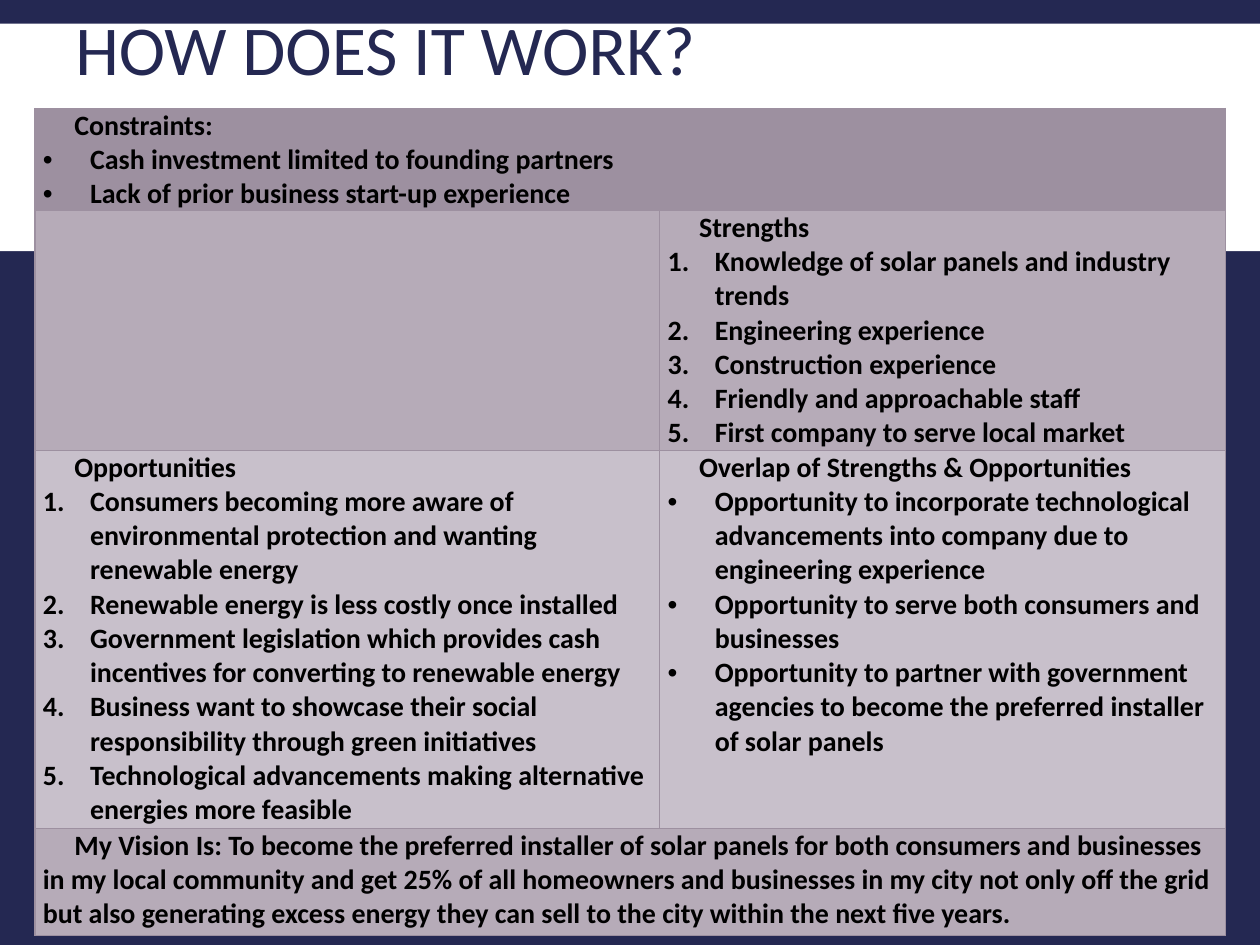
import pptx
import pptx.util
import pptx.dml.color
import pptx.enum.shapes
import pptx.enum.text
import pptx.oxml.ns
import lxml.etree

Pt = pptx.util.Pt
NAVY, MAUVE, MID, PALE = "242852", "9D90A0", "B6ABB8", "C8C0CB"


def color(value):
    """Return the colour of a hex string."""
    return pptx.dml.color.RGBColor.from_string(value)


def sub(parent, tag, **attrs):
    """Append a DrawingML element to a parent."""
    return lxml.etree.SubElement(parent, pptx.oxml.ns.qn(tag), attrs)


def add_run(p, text, size, value, bold=False):
    """Add one formatted run to a paragraph."""
    r = p.add_run()
    r.text = text
    r.font.name, r.font.size, r.font.bold = "Calibri", Pt(size), bold
    r.font.color.rgb = color(value)


def format_paragraph(p, marker):
    """Indent a heading, or hang an item behind its bullet or number."""
    pPr = p._p.get_or_add_pPr()
    if marker is None:
        pPr.set("indent", str(Pt(18)))
        return
    pPr.set("marL", str(Pt(27)))
    pPr.set("indent", str(-Pt(27)))
    if marker == "number":
        sub(pPr, "a:buFont", typeface="+mj-lt")
        sub(pPr, "a:buAutoNum", type="arabicPeriod")
    else:
        sub(pPr, "a:buFont", typeface="Arial")
        sub(pPr, "a:buChar", char="•")


def fill_cell(cell, fill, heading="", marker=None, items=()):
    """Style a cell and write its heading and list."""
    tcPr = cell._tc.get_or_add_tcPr()
    for side in "LRTB":
        ln = sub(tcPr, "a:ln" + side, w=str(Pt(0.75)))
        sub(sub(ln, "a:solidFill"), "a:srgbClr", val=MAUVE)
    cell.fill.solid()
    cell.fill.fore_color.rgb = color(fill)
    cell.margin_left = cell.margin_right = Pt(4.5)
    cell.margin_top = cell.margin_bottom = 0
    if not heading:
        return
    tf = cell.text_frame
    for i, text in enumerate([heading, *items]):
        p = tf.add_paragraph() if i else tf.paragraphs[0]
        format_paragraph(p, marker if i else None)
        add_run(p, text, 16, "000000", True)


def add_header(s, x, y, w, h):
    """Place the white band and the title over its top."""
    band = s.shapes.add_shape(pptx.enum.shapes.MSO_SHAPE.RECTANGLE, Pt(x), Pt(y), Pt(w), Pt(h))
    band.shadow.inherit = False
    band.fill.solid()
    band.fill.fore_color.rgb = color("FFFFFF")
    band.line.fill.background()
    sp = s.shapes.add_textbox(Pt(x + 36), Pt(y - 27.5), Pt(w - 72), Pt(90))
    tf = sp.text_frame
    tf.word_wrap = True
    tf.vertical_anchor = pptx.enum.text.MSO_ANCHOR.MIDDLE
    p = tf.paragraphs[0]
    p.line_spacing = 0.85
    add_run(p, "HOW DOES IT WORK?", 40, NAVY)


def add_analysis_table(s, x, y, widths, heights):
    """Place the table of constraints, strengths, opportunities and vision."""
    frame = s.shapes.add_table(len(heights), len(widths), Pt(x), Pt(y), Pt(sum(widths)), Pt(sum(heights)))
    table = frame.table
    table.first_row = table.horz_banding = False
    for column, width in zip(table.columns, widths):
        column.width = Pt(width)
    for row, height in zip(table.rows, heights):
        row.height = Pt(height)
    for i in (0, 3):
        table.cell(i, 0).merge(table.cell(i, 1))
    fill_cell(table.cell(0, 0), MAUVE, "Constraints:", "bullet", [
        "Cash investment limited to founding partners",
        "Lack of prior business start-up experience",
    ])
    fill_cell(table.cell(1, 0), MID)
    fill_cell(table.cell(1, 1), MID, "Strengths", "number", [
        "Knowledge of solar panels and industry trends",
        "Engineering experience",
        "Construction experience",
        "Friendly and approachable staff",
        "First company to serve local market",
    ])
    fill_cell(table.cell(2, 0), PALE, "Opportunities", "number", [
        "Consumers becoming more aware of environmental protection and wanting renewable energy",
        "Renewable energy is less costly once installed",
        "Government legislation which provides cash incentives for converting to renewable energy",
        "Business want to showcase their social responsibility through green initiatives",
        "Technological advancements making alternative energies more feasible",
    ])
    fill_cell(table.cell(2, 1), PALE, "Overlap of Strengths & Opportunities", "bullet", [
        "Opportunity to incorporate technological advancements into company due to engineering experience",
        "Opportunity to serve both consumers and businesses",
        "Opportunity to partner with government agencies to become the preferred installer of solar panels",
    ])
    fill_cell(table.cell(3, 0), MID, (
        "My Vision Is: To become the preferred installer of solar panels for both consumers and "
        "businesses in my local community and get 25% of all homeowners and businesses in my city "
        "not only off the grid but also generating excess energy they can sell to the city within "
        "the next five years."))


def main():
    """Build and save the slide."""
    prs = pptx.Presentation()
    prs.slide_width, prs.slide_height = Pt(720), Pt(540)
    s = prs.slides.add_slide(prs.slide_layouts[6])
    s.background.fill.solid()
    s.background.fill.fore_color.rgb = color(NAVY)
    add_header(s, 0, 13.5, 720, 130)
    add_analysis_table(s, 20, 62, (357, 323.5), (58.5, 137, 216, 61))
    prs.save("out.pptx")


if __name__ == "__main__":
    main()
